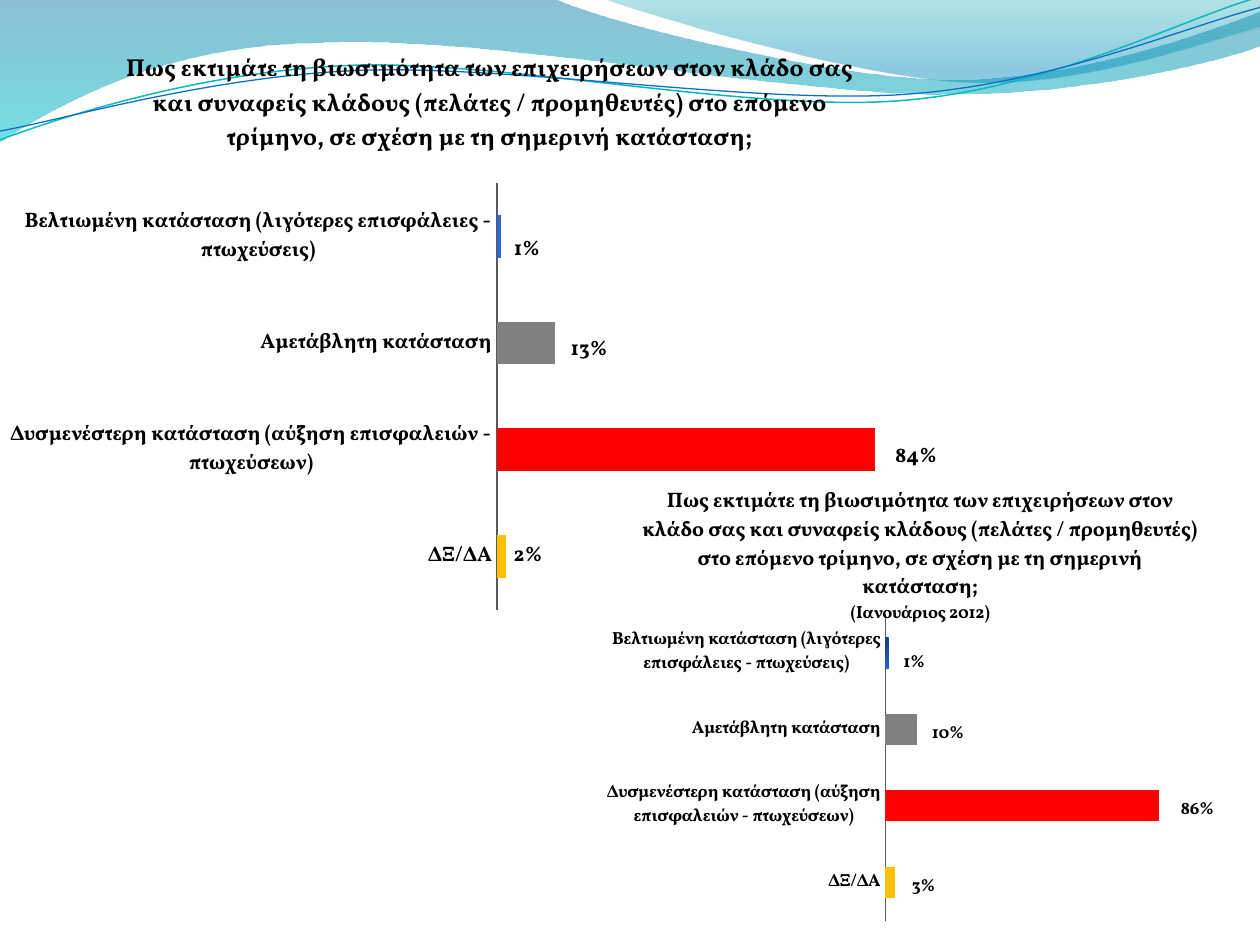
from math import cos, radians, sin

from lxml import etree
from pptx import Presentation
from pptx.chart.data import CategoryChartData
from pptx.dml.color import RGBColor
from pptx.enum.chart import XL_CHART_TYPE, XL_LABEL_POSITION, XL_TICK_MARK
from pptx.oxml.ns import qn
from pptx.util import Pt

BAR = XL_CHART_TYPE.BAR_CLUSTERED
END = XL_LABEL_POSITION.OUTSIDE_END
NO_TICK = XL_TICK_MARK.NONE
FONT = "Vollkorn"
TILT = 2.7

ASK = ("Πως εκτιμάτε τη βιωσιμότητα των επιχειρήσεων στον κλάδο σας και συναφείς "
       "κλάδους (πελάτες / προμηθευτές) στο επόμενο τρίμηνο, σε σχέση με τη "
       "σημερινή κατάσταση;")
CATS = ["Βελτιωμένη κατάσταση (λιγότερες επισφάλειες - πτωχεύσεις)",
        "Αμετάβλητη κατάσταση",
        "Δυσμενέστερη κατάσταση (αύξηση επισφαλειών - πτωχεύσεων)",
        "ΔΞ/ΔΑ"]

# A pair is a straight step, six numbers are a cubic curve.
BACK = [(0, -0.7), (316.8, -0.7),
        (342.7, 12.2, 478.1, 45.4, 545.8, 45.4),
        (614.2, 45.4, 689.8, 18.7, 720, 6.5), (720.7, 25.9),
        (707.8, 31.7, 626.4, 54.7, 537.1, 54),
        (447.8, 54, 275, 20.2, 185, 24.5),
        (92.9, 25.2, 33.1, 59.8, -0.7, 81.4), (0, -0.7)]
FRONT = [(344.9, -0.7),
         (366.5, 7.9, 491, 44.6, 553.7, 46.8),
         (616.3, 49.7, 691.9, 23, 720, 15.1), (720, 0), (344.9, -0.7)]
TEAL = [(0, 79.9),
        (34.6, 67, 113.8, 41, 199.4, 37.4),
        (284.4, 33.8, 427, 64.1, 513.4, 57.6),
        (599.8, 51.1, 675.4, 10.8, 718.6, -1.4)]
BLUE = [(0, 74.9),
        (33.8, 69.1, 118.1, 43.9, 203.8, 40.3),
        (290.2, 36.7, 429.8, 59.8, 516.2, 54),
        (601.9, 48.2, 677.5, 15.1, 720, 4.3)]


def rgb(code):
    return RGBColor.from_string(code)


def style(font, size, color="000000"):
    for key, val in {"name": FONT, "size": Pt(size), "bold": True}.items():
        setattr(font, key, val)
    font.color.rgb = rgb(color)


def blend(fill, angle, stops):
    """Fill with two (position, colour) stops."""
    fill.gradient()
    fill.gradient_angle = angle
    for stop, (pos, code) in zip(fill.gradient_stops, stops):
        stop.position = pos
        stop.color.rgb = rgb(code)


def pairs(step):
    return list(zip(step[::2], step[1::2]))


def turn(steps, mid):
    """Turn all points clockwise by TILT about mid."""
    c, s = cos(radians(TILT)), sin(radians(TILT))
    out = []
    for step in steps:
        flat = []
        for x, y in pairs(step):
            dx, dy = x - mid[0], y - mid[1]
            flat += [mid[0] + dx * c - dy * s, mid[1] + dx * s + dy * c]
        out.append(flat)
    return out


def outline(slide, steps, close):
    """Draw through all points, then join each three into a cubic curve."""
    dots = [(Pt(x), Pt(y)) for step in steps for x, y in pairs(step)]
    pen = slide.shapes.build_freeform(*dots[0])
    pen.add_line_segments(dots[1:], close=close)
    shape = pen.convert_to_shape()
    shape.shadow.inherit = False
    lines = iter(list(shape._element.iter(qn("a:lnTo"))))
    for step in steps[1:]:
        first = next(lines)
        if len(step) == 2:
            continue
        curve = etree.Element(qn("a:cubicBezTo"))
        first.addprevious(curve)
        for line in (first, next(lines), next(lines)):
            curve.append(line[0])
            line.getparent().remove(line)
    return shape


def add_wave(slide, steps, stops, alphas):
    shape = outline(slide, steps, True)
    shape.line.fill.background()
    blend(shape.fill, 270, stops)
    tones = shape._element.spPr.iter(qn("a:srgbClr"))
    for tone, alpha in zip(list(tones), alphas):
        etree.SubElement(tone, qn("a:alpha"), val=str(alpha * 1000))


def add_curve(slide, steps, mid, color, width):
    shape = outline(slide, turn(steps, mid), False)
    shape.rotation = 360 - TILT
    shape.fill.background()
    shape.line.color.rgb = rgb(color)
    shape.line.width = Pt(width)


def place(host, index, **parts):
    """Insert a manual layout, sized in percent, as child number index."""
    old = host.find(qn("c:layout"))
    if old is not None:
        host.remove(old)
    layout = etree.Element(qn("c:layout"))
    manual = etree.SubElement(layout, qn("c:manualLayout"))
    for key, val in parts.items():
        text = val if isinstance(val, str) else f"{val / 100:.4f}"
        etree.SubElement(manual, qn("c:" + key), val=text)
    host.insert(index, layout)


def set_title(chart, lines, spot):
    frame = chart.chart_title.text_frame
    for i, (text, size) in enumerate(lines):
        para = frame.paragraphs[0] if i == 0 else frame.add_paragraph()
        run = para.add_run()
        run.text = text
        style(run.font, size)
    place(chart.chart_title._element, 1, xMode="edge", yMode="edge",
          x=spot[0], y=spot[1])


def set_axes(chart, size, top):
    cat, val = chart.category_axis, chart.value_axis
    cat.reverse_order = True
    cat.major_tick_mark = NO_TICK
    cat.format.line.color.rgb = rgb("595959")
    cat.format.line.width = Pt(0.75)
    style(cat.tick_labels.font, size)
    for key, item in {"visible": False, "has_major_gridlines": False,
                      "minimum_scale": 0, "maximum_scale": top}.items():
        setattr(val, key, item)


def set_bars(series, fills, size, shifts):
    """Colour each bar and move its label by a percentage of the chart."""
    for i, color in enumerate(fills):
        point = series.points[i]
        fill = point.format.fill
        if isinstance(color, str):
            fill.solid()
            fill.fore_color.rgb = rgb(color)
        else:
            blend(fill, 315, color)
        style(point.data_label.font, size)
        point.data_label.position = END
    root = series._element
    for mark, (dx, dy) in zip(list(root.iter(qn("c:dLbl"))), shifts):
        place(mark, 1, x=dx, y=dy)
    for lead in root.iter(qn("c:showLeaderLines")):
        lead.set("val", "0")


def add_bars(slide, box, vals, lines, spot, plot, top, size, fills, shifts):
    data = CategoryChartData(number_format="0%")
    data.categories = CATS
    data.add_series("Series 1", vals)
    chart = slide.shapes.add_chart(BAR, *map(Pt, box), data).chart
    chart.has_legend = False
    style(chart.font, 10)
    set_title(chart, lines, spot)
    set_axes(chart, size, top)
    bars = chart.plots[0]
    bars.gap_width = 150
    bars.vary_by_categories = False
    set_bars(bars.series[0], fills, size, shifts)
    area = chart._chartSpace.find(".//" + qn("c:plotArea"))
    place(area, 0, layoutTarget="inner", xMode="edge", yMode="edge",
          **dict(zip("xywh", plot)))


def main():
    deck = Presentation()
    deck.slide_width, deck.slide_height = Pt(720), Pt(540)
    slide = deck.slides.add_slide(deck.slide_layouts[6])
    add_wave(slide, BACK, [(0, "0074A1"), (1, "00C6CF")], (45, 55))
    add_wave(slide, FRONT, [(0, "00A1A9"), (0.8, "008BBF")], (30, 45))
    add_curve(slide, TEAL, (359.3, 41.4), "0AB8BF", 0.85)
    add_curve(slide, BLUE, (359.6, 42.5), "0F6FC6", 0.75)
    rest = ["808080", "FF0000", "FFC000"]
    add_bars(slide, (308.9, 270, 404.6, 263.5), (0.01, 0.1, 0.86, 0.03),
             [(ASK, 12), ("(Ιανουάριος 2012)", 10)], (13.8, 1.9),
             (48.7, 30.8, 44.9, 66.4), 1, 10,
             [[(0, "173A80"), (1, "2862D7")]] + rest,
             [(1.4, 2.4), (1.4, 1.1), (2.4, 1.1), (1.7, 1.1)])
    add_bars(slide, (0, 20.9, 535.7, 334.8), (0.01, 0.13, 0.84, 0.02),
             [(ASK, 14)], (13, 1.6),
             (53.1, 25, 43.3, 72.9), 0.9, 12, ["3366CC"] + rest,
             [(0.8, 2.3), (1.1, 1.2), (1.6, 1.3), (0.3, 0)])
    deck.save("out.pptx")


if __name__ == "__main__":
    main()
